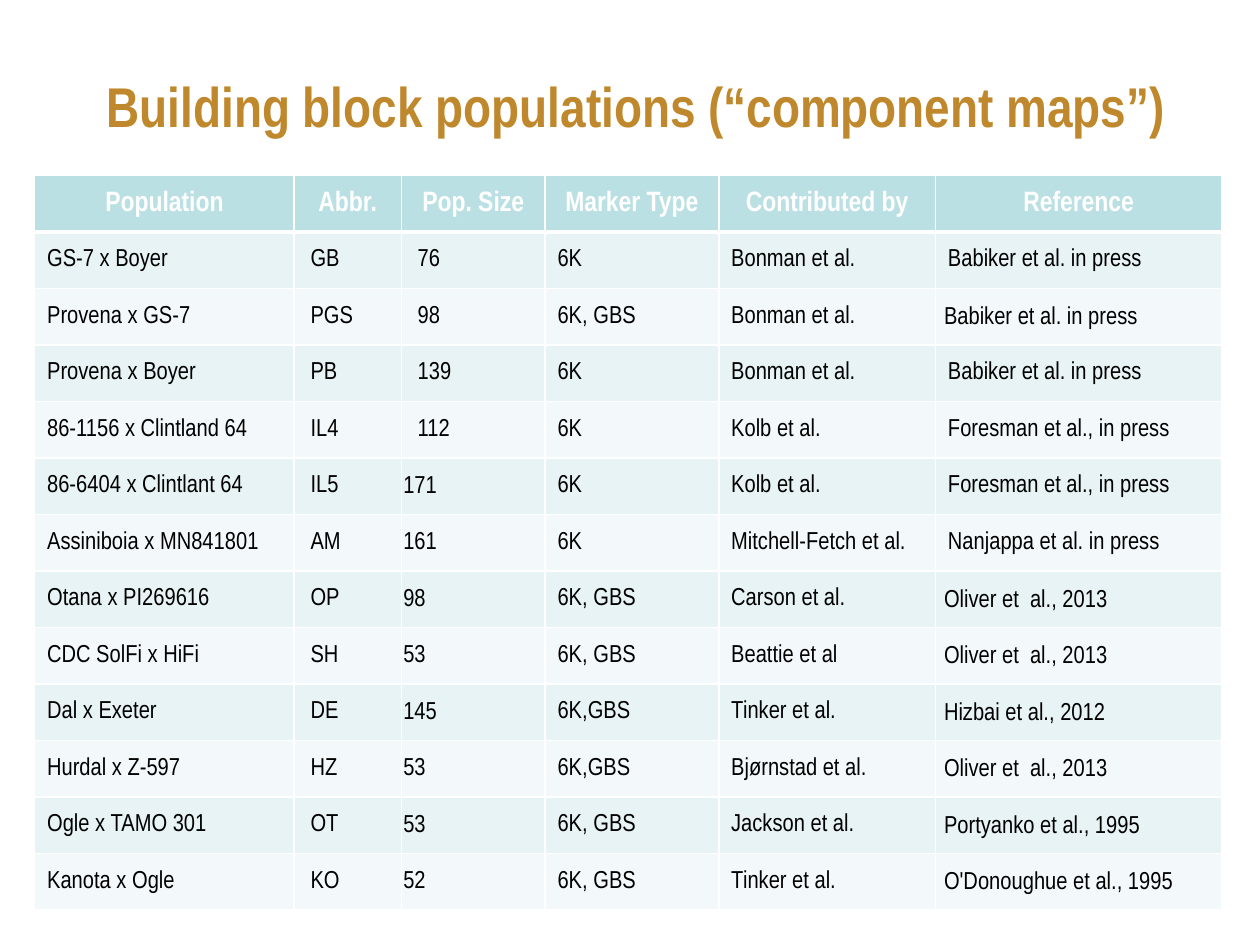
import lxml.etree
import pptx
import pptx.dml.color
import pptx.enum.text
import pptx.oxml.ns
import pptx.util

Cm = pptx.util.Cm
Pt = pptx.util.Pt
qn = pptx.oxml.ns.qn
FONT = "Arial Narrow"
COLUMN_WIDTHS = (5.23, 2.16, 2.9, 3.5, 4.37, 5.77)
ROW_HEIGHT = 1.14
DEFAULT_INSETS = (0.25, 0.13, 0.25, 0.13)
WIDE_INSETS = (0.33, 0.13, 0.33, 0.13)
TIGHT_INSETS = (0.04, 0.02, 0.04, 0)
CITATION_INSETS = (0.17, 0, 0.17, 0)
ABBREVIATION, SIZE, REFERENCE = 1, 2, 5
LOOSE_REFERENCE_ROWS = {2, 7, 8, 9, 10, 11, 12}
FIRST_TIGHT_SIZE_ROW = 5

POPULATIONS = (
    ("Population", "Abbr.", "Pop. Size", "Marker Type", "Contributed by", "Reference"),
    ("GS-7 x Boyer", "GB", "76", "6K", "Bonman et al.", "Babiker et al. in press"),
    ("Provena x GS-7", "PGS", "98", "6K, GBS", "Bonman et al.", "Babiker et al. in press"),
    ("Provena x Boyer", "PB", "139", "6K", "Bonman et al.", "Babiker et al. in press"),
    ("86-1156 x Clintland 64", "IL4", "112", "6K", "Kolb et al.", "Foresman et al., in press"),
    ("86-6404 x Clintlant 64", "IL5", "171", "6K", "Kolb et al.", "Foresman et al., in press"),
    ("Assiniboia x MN841801", "AM", "161", "6K", "Mitchell-Fetch et al.", "Nanjappa et al. in press"),
    ("Otana x PI269616", "OP", "98", "6K, GBS", "Carson et al.", "Oliver et  al., 2013"),
    ("CDC SolFi x HiFi", "SH", "53", "6K, GBS", "Beattie et al", "Oliver et  al., 2013"),
    ("Dal x Exeter", "DE", "145", "6K,GBS", "Tinker et al.", "Hizbai et al., 2012"),
    ("Hurdal x Z-597", "HZ", "53", "6K,GBS", "Bjørnstad et al.", "Oliver et  al., 2013"),
    ("Ogle x TAMO 301", "OT", "53", "6K, GBS", "Jackson et al.", "Portyanko et al., 1995"),
    ("Kanota x Ogle", "KO", "52", "6K, GBS", "Tinker et al.", "O'Donoughue et al., 1995"),
)


def color(value):
    """Turn a hex string into a colour."""
    return pptx.dml.color.RGBColor.from_string(value)


def write(frame, text, size, hue, bold):
    """Put one formatted line into a text frame and return its paragraph."""
    frame.text = text
    paragraph = frame.paragraphs[0]
    font = paragraph.runs[0].font
    font.name, font.size, font.bold = FONT, Pt(size), bold
    font.color.rgb = color(hue)
    return paragraph


def add_borders(cell, top, bottom):
    """Draw white borders, with the top and bottom widths in points."""
    properties = cell._tc.get_or_add_tcPr()
    for side, width in (("L", 1), ("R", 1), ("T", top), ("B", bottom)):
        line = lxml.etree.SubElement(properties, qn(f"a:ln{side}"), w=str(Pt(width)))
        fill = lxml.etree.SubElement(line, qn("a:solidFill"))
        lxml.etree.SubElement(fill, qn("a:srgbClr"), val="FFFFFF")


def cell_insets(row, column):
    """Choose the left, top, right and bottom insets of a cell."""
    if row and column == ABBREVIATION:
        return WIDE_INSETS
    if row and column == SIZE:
        return TIGHT_INSETS if row >= FIRST_TIGHT_SIZE_ROW else WIDE_INSETS
    if column == REFERENCE and row in LOOSE_REFERENCE_ROWS:
        return CITATION_INSETS
    return DEFAULT_INSETS


def fill_cell(cell, text, row, column):
    """Style and fill one cell according to its row and column."""
    add_borders(cell, top=3 if row == 1 else 1, bottom=3 if row == 0 else 1)
    cell.fill.solid()
    band = "E7F3F4" if row % 2 else "F3F9FA"
    cell.fill.fore_color.rgb = color(band if row else "BBE0E3")
    cell.vertical_anchor = pptx.enum.text.MSO_ANCHOR.MIDDLE
    insets = [Cm(inset) for inset in cell_insets(row, column)]
    cell.margin_left, cell.margin_top, cell.margin_right, cell.margin_bottom = insets
    if row == 0:
        heading = write(cell.text_frame, text, 16, "FFFFFF", True)
        heading.alignment = pptx.enum.text.PP_ALIGN.CENTER
    else:
        entry = write(cell.text_frame, text, 14, "000000", False)
        if column == REFERENCE and row in LOOSE_REFERENCE_ROWS:
            entry.line_spacing = 1.15


def add_title(slide, left, top, width, height):
    """Place the slide title in its box."""
    title = slide.shapes.add_textbox(Cm(left), Cm(top), Cm(width), Cm(height))
    frame = title.text_frame
    frame.word_wrap = True
    frame.vertical_anchor = pptx.enum.text.MSO_ANCHOR.MIDDLE
    write(frame, "Building block populations (“component maps”)", 32, "C0882C", True)


def add_population_table(slide, left, top):
    """Place the table of populations from its top left corner."""
    rows, columns = len(POPULATIONS), len(COLUMN_WIDTHS)
    populations = slide.shapes.add_table(
        rows, columns, Cm(left), Cm(top), Cm(sum(COLUMN_WIDTHS)), Cm(rows * ROW_HEIGHT)
    ).table
    for column, width in zip(populations.columns, COLUMN_WIDTHS):
        column.width = Cm(width)
    for row, entries in enumerate(POPULATIONS):
        populations.rows[row].height = Cm(ROW_HEIGHT)
        for column, text in enumerate(entries):
            fill_cell(populations.cell(row, column), text, row, column)


def main():
    """Build and save the slide."""
    deck = pptx.Presentation()
    deck.slide_width, deck.slide_height = Cm(25.4), Cm(19.05)
    slide = deck.slides.add_slide(deck.slide_layouts[6])
    add_title(slide, 1.9, 0.84, 22.4, 2.54)
    add_population_table(slide, 0.7, 3.54)
    deck.save("out.pptx")


if __name__ == "__main__":
    main()
